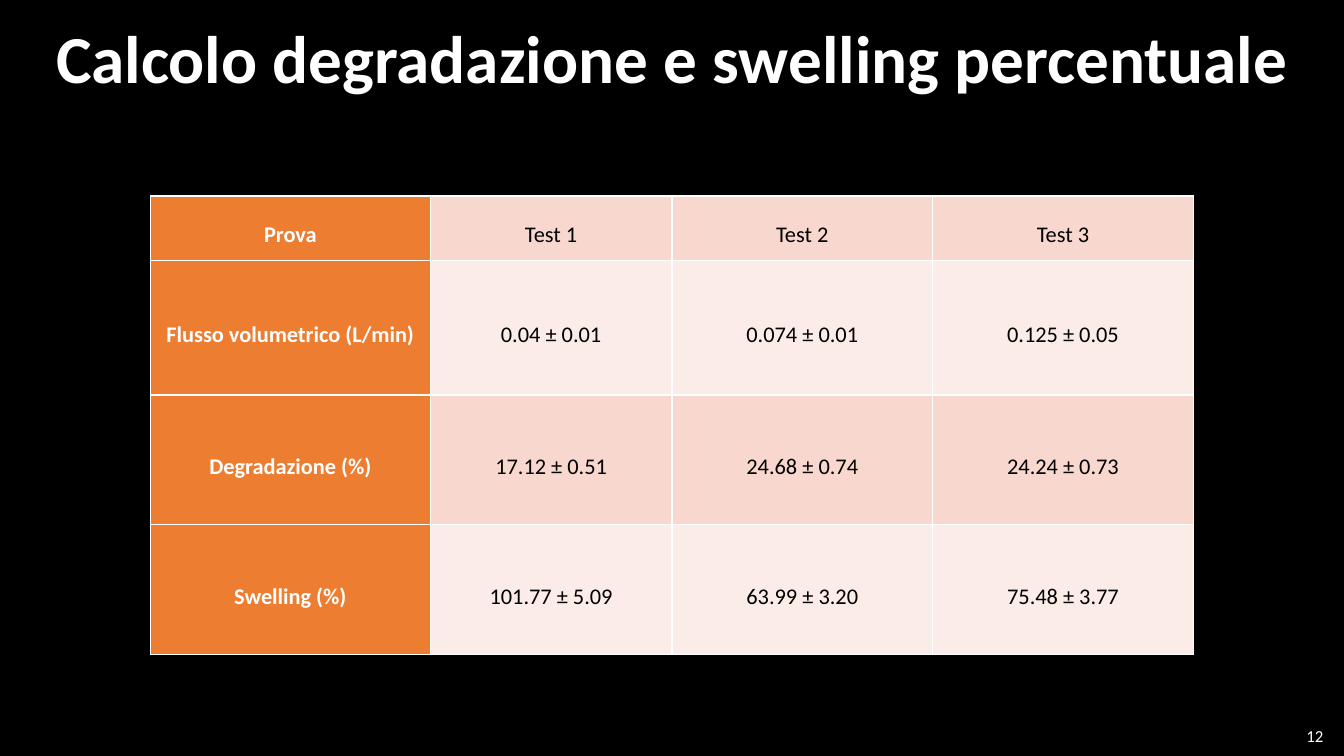
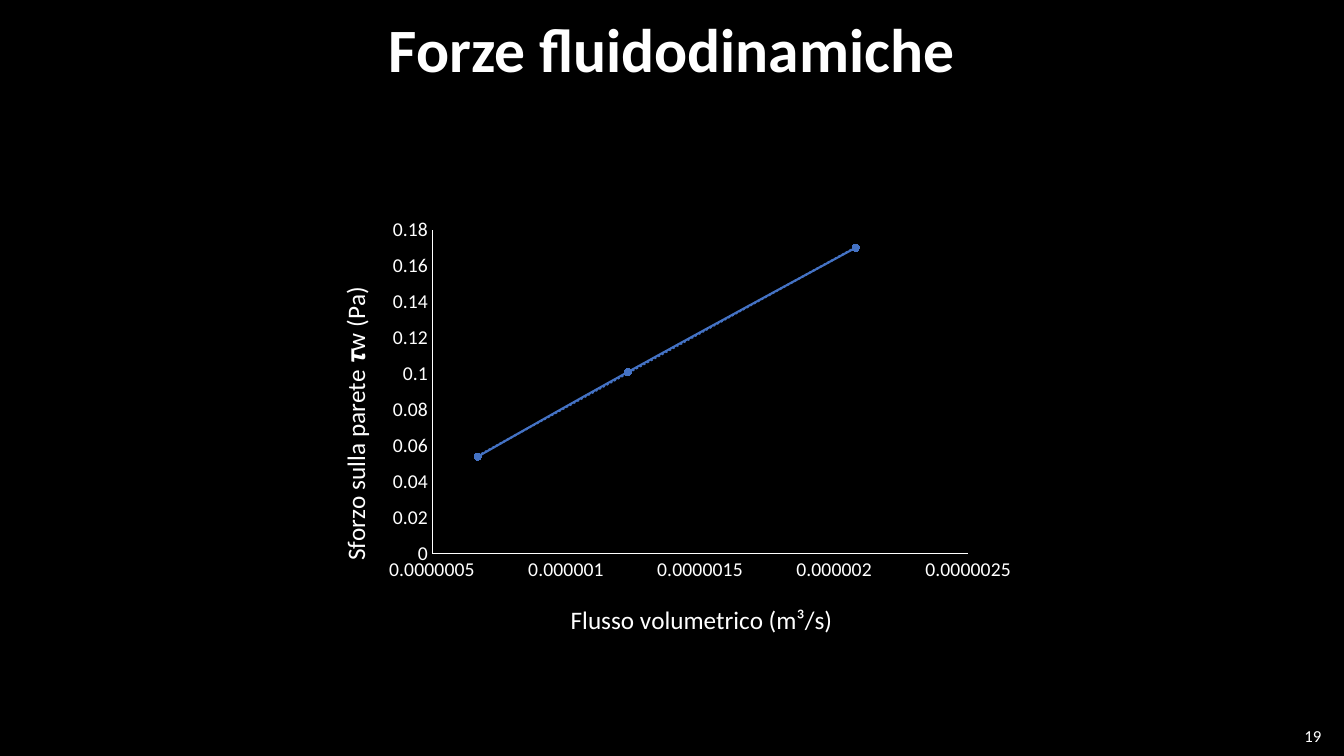
import dataclasses
import pptx
import pptx.chart.data
import pptx.dml.color
import pptx.enum.chart
import pptx.enum.text
import pptx.oxml
import pptx.oxml.ns
import pptx.util

Pt = pptx.util.Pt
qn = pptx.oxml.ns.qn
ALIGN = pptx.enum.text.PP_ALIGN
MIDDLE = pptx.enum.text.MSO_ANCHOR.MIDDLE
NS = pptx.oxml.ns.nsdecls("a", "c")


@dataclasses.dataclass(frozen=True)
class Theme:
    font: str = "Calibri"
    back: str = "000000"
    light: str = "FFFFFF"
    dark: str = "000000"
    head: str = "ED7D31"
    bands: tuple = ("F8D7CE", "FCECE8")
    series: str = "4472C4"
    number: int = 12
    cell: int = 16
    tick: int = 14
    axis_title: int = 18


T = Theme()


def rgb(value):
    return pptx.dml.color.RGBColor.from_string(value)


def style_font(font, size, color=T.light, bold=False):
    for name, value in {"name": T.font, "size": Pt(size), "bold": bold}.items():
        setattr(font, name, value)
    font.color.rgb = rgb(color)


def style_line(line, color, width):
    line.color.rgb = rgb(color)
    line.width = Pt(width)


def place(shape, box):
    for name, value in zip(("left", "top", "width", "height"), box):
        setattr(shape, name, Pt(value))


def write(tf, text, size, align, spacing=1.0, color=T.light, bold=False):
    p = tf.paragraphs[0]
    p.alignment, p.line_spacing = align, spacing
    r = p.add_run()
    r.text = text
    style_font(r.font, size, color, bold)


def add_titled_slide(prs, title, size, title_box, number, number_box):
    s = prs.slides.add_slide(prs.slide_layouts.get_by_name("Title Only"))
    number_shape = s.shapes.add_textbox(*map(Pt, number_box))
    place(s.shapes.title, title_box)
    for sp in (s.shapes.title, number_shape):
        tf = sp.text_frame
        tf.word_wrap = True
        tf.auto_size = pptx.enum.text.MSO_AUTO_SIZE.NONE
        tf.vertical_anchor = MIDDLE
    write(s.shapes.title.text_frame, title, size, ALIGN.CENTER, 0.9, bold=True)
    write(number_shape.text_frame, str(number), T.number, ALIGN.RIGHT)
    return s


def add_cell_borders(cell):
    tc_pr = cell._tc.get_or_add_tcPr()
    for i, side in enumerate("LRTB"):
        tc_pr.insert(i, pptx.oxml.parse_xml(
            f'<a:ln{side} {NS} w="12700"><a:solidFill>'
            f'<a:srgbClr val="{T.light}"/></a:solidFill></a:ln{side}>'))


def add_results_table(s, box, rows, col_shares, row_shares):
    frame = s.shapes.add_table(len(rows), len(rows[0]), *map(Pt, box))
    table = frame.table
    table.first_row = table.horz_banding = False
    for col, share in zip(table.columns, col_shares):
        col.width = Pt(box[2] * share / sum(col_shares))
    for row, share in zip(table.rows, row_shares):
        row.height = Pt(box[3] * share / sum(row_shares))
    for i, row in enumerate(rows):
        for j, text in enumerate(row):
            cell = table.cell(i, j)
            head = j == 0
            cell.fill.solid()
            cell.fill.fore_color.rgb = rgb(T.head if head else T.bands[i % 2])
            cell.vertical_anchor = MIDDLE
            cell.margin_left = cell.margin_right = Pt(5)
            cell.margin_top = cell.margin_bottom = 0
            write(cell.text_frame, text, T.cell, ALIGN.CENTER, 1.5,
                  T.light if head else T.dark, head)
            add_cell_borders(cell)


def set_layout(element, target="", **shares):
    for old in element.findall(qn("c:layout")):
        element.remove(old)
    parts = "".join(f'<c:{k}Mode val="edge"/>' for k in "xy")
    parts += "".join(f'<c:{k} val="{v}"/>' for k, v in shares.items())
    element.insert(len(element.findall(qn("c:tx"))), pptx.oxml.parse_xml(
        f"<c:layout {NS}><c:manualLayout>{target}{parts}"
        "</c:manualLayout></c:layout>"))


def style_axis(axis, title, title_at, low, high, step, number_format):
    axis.minimum_scale, axis.maximum_scale, axis.major_unit = low, high, step
    axis.has_major_gridlines = False
    axis.major_tick_mark = axis.minor_tick_mark = pptx.enum.chart.XL_TICK_MARK.NONE
    axis.tick_labels.number_format = number_format
    axis.tick_labels.number_format_is_linked = False
    style_font(axis.tick_labels.font, T.tick)
    style_line(axis.format.line, T.light, 0.75)
    write(axis.axis_title.text_frame, title, T.axis_title, ALIGN.CENTER)
    set_layout(axis.axis_title._element, **title_at)


def style_series(series):
    style_line(series.format.line, T.series, 1.5)
    series.marker.style = pptx.enum.chart.XL_MARKER_STYLE.CIRCLE
    series.marker.size = 5
    series.marker.format.fill.solid()
    series.marker.format.fill.fore_color.rgb = rgb(T.series)
    style_line(series.marker.format.line, T.series, 0.75)
    ser = series._element
    ser.find(qn("c:smooth")).set("val", "1")
    ser.find(qn("c:xVal")).addprevious(pptx.oxml.parse_xml(
        f'<c:trendline {NS}><c:spPr><a:ln w="19050"><a:solidFill>'
        f'<a:srgbClr val="{T.series}"/></a:solidFill><a:prstDash val="sysDot"/>'
        '</a:ln></c:spPr><c:trendlineType val="linear"/>'
        '<c:dispRSqr val="0"/><c:dispEq val="0"/></c:trendline>'))


def add_stress_chart(s, box, points):
    data = pptx.chart.data.XyChartData()
    series = data.add_series("Series 1")
    for x, y in points:
        series.add_data_point(x, y)
    chart = s.shapes.add_chart(
        pptx.enum.chart.XL_CHART_TYPE.XY_SCATTER_SMOOTH,
        *map(Pt, box), data).chart
    chart.has_legend = chart.has_title = False
    style_font(chart.font, 10)
    chart.plots[0].vary_by_categories = False
    style_series(chart.plots[0].series[0])
    style_axis(chart.category_axis, "Flusso volumetrico (m³/s)",
               {"x": 0.35, "y": 0.89}, 5e-7, 2.5e-6, 5e-7, "0.0######")
    style_axis(chart.value_axis, "Sforzo sulla parete 𝝉w (Pa)",
               {"x": 0.02, "y": 0.17}, 0, 0.18, 0.02, "General")
    set_layout(chart._chartSpace.chart.plotArea,
               '<c:layoutTarget val="inner"/>', x=0.16, y=0.05, w=0.76, h=0.74)


def main():
    prs = pptx.Presentation()
    prs.slide_width, prs.slide_height = Pt(960), Pt(540)
    fill = prs.slide_master.background.fill
    fill.solid()
    fill.fore_color.rgb = rgb(T.back)

    s = add_titled_slide(
        prs, "Calcolo degradazione e swelling percentuale", 48,
        (21.5, -8, 917.5, 104.5), 12, (736.5, 511, 216, 29))
    add_results_table(s, (107.5, 140, 745, 327.5), [
        ("Prova", "Test 1", "Test 2", "Test 3"),
        ("Flusso volumetrico (L/min)", "0.04 ± 0.01", "0.074 ± 0.01", "0.125 ± 0.05"),
        ("Degradazione (%)", "17.12 ± 0.51", "24.68 ± 0.74", "24.24 ± 0.73"),
        ("Swelling (%)", "101.77 ± 5.09", "63.99 ± 3.20", "75.48 ± 3.77"),
    ], (2.78, 2.4, 2.59, 2.59), (0.64, 1.34, 1.29, 1.29))

    s = add_titled_slide(
        prs, "Forze fluidodinamiche", 44,
        (265, -14.5, 430, 104.5), 19, (735, 511, 216, 29))
    add_stress_chart(s, (228, 148.5, 504, 313),
                     [(6.7e-7, 0.054), (1.23e-6, 0.101), (2.08e-6, 0.17)])
    prs.save("out.pptx")


if __name__ == "__main__":
    main()
